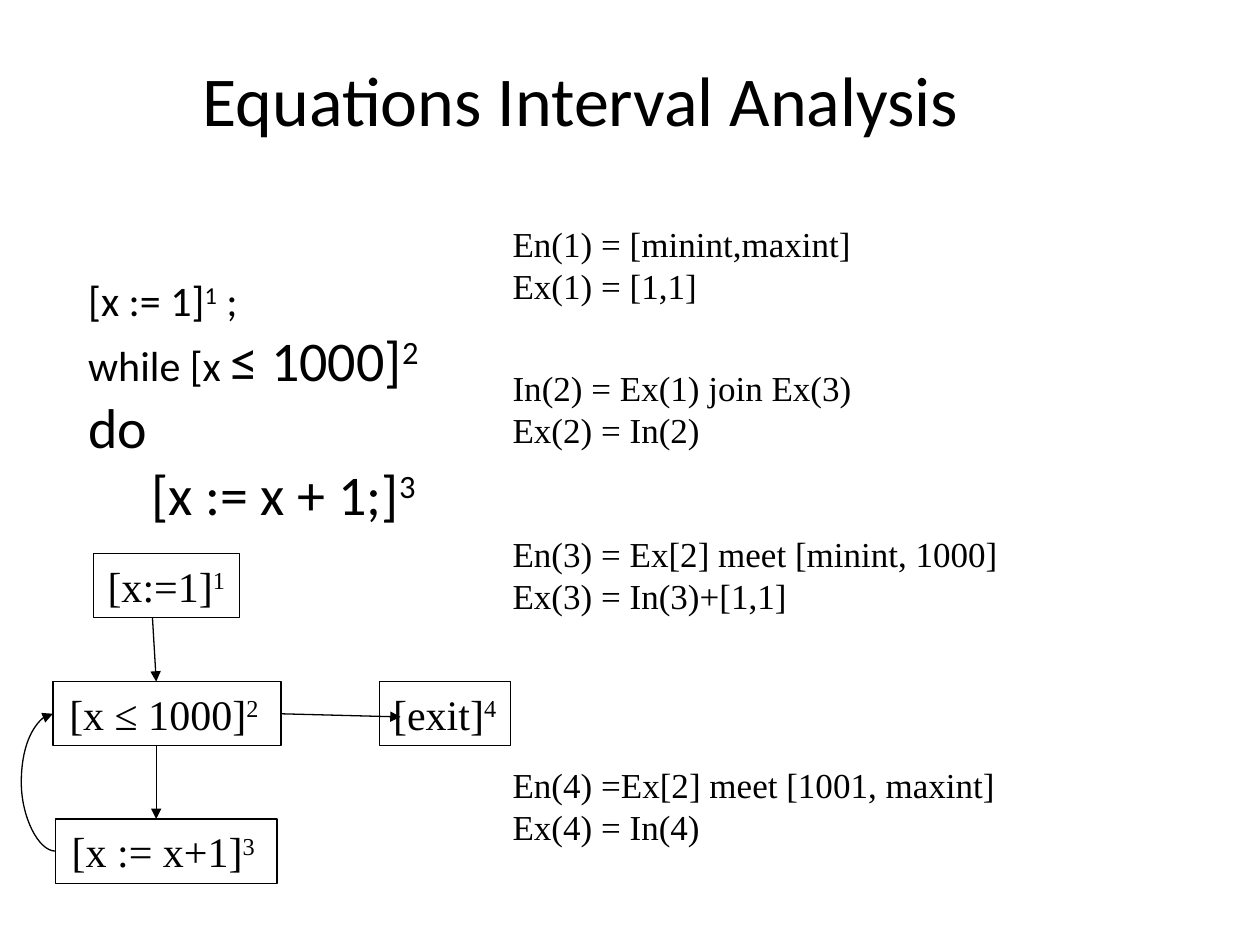
import pptx
import pptx.util
import pptx.dml.color
import pptx.enum.shapes
import pptx.enum.text
import pptx.oxml
from dataclasses import dataclass

Inches = pptx.util.Inches
Pt = pptx.util.Pt
ALIGN = pptx.enum.text.PP_ALIGN
ANCHOR = pptx.enum.text.MSO_ANCHOR
CONNECTOR = pptx.enum.shapes.MSO_CONNECTOR


@dataclass(frozen=True)
class Theme:
    ink = pptx.dml.color.RGBColor(0, 0, 0)
    paper = pptx.dml.color.RGBColor(255, 255, 255)
    sans: str = "Calibri"
    serif: str = "Times New Roman"
    title: int = 40
    large: int = 32
    code: int = 24
    equation: int = 20
    line: float = 0.75


theme = Theme()


def add_span(para, text, font, size, raised=False):
    span = para.add_run()
    span.text = text
    span.font.name = font
    span.font.size = Pt(size)
    span.font.color.rgb = theme.ink
    if raised:
        span.font._element.set("baseline", "30000")


def add_arrow(kind, start, end):
    """Draw a thin shadowless line with a triangle at its end."""
    arrow = page.shapes.add_connector(kind, *map(Inches, start + end))
    arrow.line.color.rgb = theme.ink
    arrow.line.width = Pt(theme.line)
    line = arrow.line._get_or_add_ln()
    line.append(line.makeelement(pptx.oxml.ns.qn("a:tailEnd"), {"type": "triangle"}))
    properties = arrow._element.spPr
    properties.append(properties.makeelement(pptx.oxml.ns.qn("a:effectLst"), {}))
    return arrow


deck = pptx.Presentation()
deck.slide_width, deck.slide_height = Inches(10), Inches(7.5)
page = deck.slides.add_slide(deck.slide_layouts[5])
page.background.fill.solid()
page.background.fill.fore_color.rgb = theme.paper

title = page.shapes.title
title.left, title.top, title.width, title.height = map(Inches, (0.42, 0.32, 8.5, 0.93))
title.text_frame.vertical_anchor = ANCHOR.MIDDLE
title_para = title.text_frame.paragraphs[0]
title_para.alignment = ALIGN.CENTER
add_span(title_para, "Equations Interval Analysis ", theme.sans, theme.title)

# Program: each line is a list of (text, size, raised)
program = [
    [("[x := 1]", theme.code, False), ("1", theme.code, True), (" ;", theme.code, False)],
    [("while [x ", theme.code, False), ("≤ 1000]", theme.large, False),
     ("2", theme.large, True), (" do", theme.large, False)],
    [("[x := x + 1;]", theme.large, False), ("3", theme.large, True)],
]
code_box = page.shapes.add_textbox(*map(Inches, (0.22, 1.72, 3.65, 2.07)))
code_frame = code_box.text_frame
code_frame.word_wrap = True
code_frame.margin_left = Inches(0.48)
code_frame.margin_top = Inches(0.46)
for number, spans in enumerate(program):
    para = code_frame.paragraphs[0] if number == 0 else code_frame.add_paragraph()
    for text, size, raised in spans:
        add_span(para, text, theme.sans, size, raised)
para._p.get_or_add_pPr().set("marL", str(Inches(0.5)))  # loop body is indented

equations = [
    (1.72, "En(1) = [minint,maxint]", "Ex(1) = [1,1]"),
    (2.86, "In(2) = Ex(1) join Ex(3)", "Ex(2) = In(2)"),
    (4.18, "En(3) = Ex[2] meet [minint, 1000]", "Ex(3) = In(3)+[1,1]"),
    (6.01, "En(4) =Ex[2] meet [1001, maxint]", "Ex(4) = In(4)"),
]
for top, entry, leave in equations:
    box = page.shapes.add_textbox(*map(Inches, (3.97, top, 5.8, 0.77)))
    box.text_frame.word_wrap = True
    add_span(box.text_frame.paragraphs[0], entry, theme.serif, theme.equation)
    add_span(box.text_frame.add_paragraph(), leave, theme.serif, theme.equation)

# Control flow graph
blocks = [
    ("[x:=1]", "1", 0.74, 4.39, 1.16),
    ("[x ≤ 1000]", "2 ", 0.42, 5.41, 1.81),
    ("[x := x+1]", "3 ", 0.44, 6.5, 1.76),
    ("[exit]", "4", 3.01, 5.41, 1.04),
]
nodes = []
for text, label, left, top, width in blocks:
    node = page.shapes.add_shape(pptx.enum.shapes.MSO_SHAPE.RECTANGLE,
                                 *map(Inches, (left, top, width, 0.51)))
    node.shadow.inherit = False
    node.fill.background()
    node.line.color.rgb = theme.ink
    node.line.width = Pt(theme.line)
    node.text_frame.word_wrap = False
    node.text_frame.vertical_anchor = ANCHOR.MIDDLE
    para = node.text_frame.paragraphs[0]
    para.alignment = ALIGN.CENTER
    add_span(para, text, theme.serif, theme.code)
    add_span(para, label, theme.serif, theme.code, raised=True)
    nodes.append(node)
start, condition, increment, leave = nodes

add_arrow(CONNECTOR.STRAIGHT, (1.21, 4.9), (1.24, 5.41))
add_arrow(CONNECTOR.STRAIGHT, (1.24, 5.92), (1.24, 6.5))
exit_arrow = add_arrow(CONNECTOR.STRAIGHT, (2.23, 5.66), (3.18, 5.69))
exit_arrow.begin_connect(condition, 3)

loop_arrow = add_arrow(CONNECTOR.CURVE, (0.44, 6.76), (0.42, 5.66))
loop_arrow.begin_connect(increment, 1)
loop_arrow.end_connect(condition, 1)
bends = loop_arrow._element.spPr.prstGeom.get_or_add_avLst()
# The bend lies 13.5 connector widths left of its start
bends.append(bends.makeelement(pptx.oxml.ns.qn("a:gd"),
                               {"name": "adj1", "fmla": "val 1350000"}))

deck.save("out.pptx")
